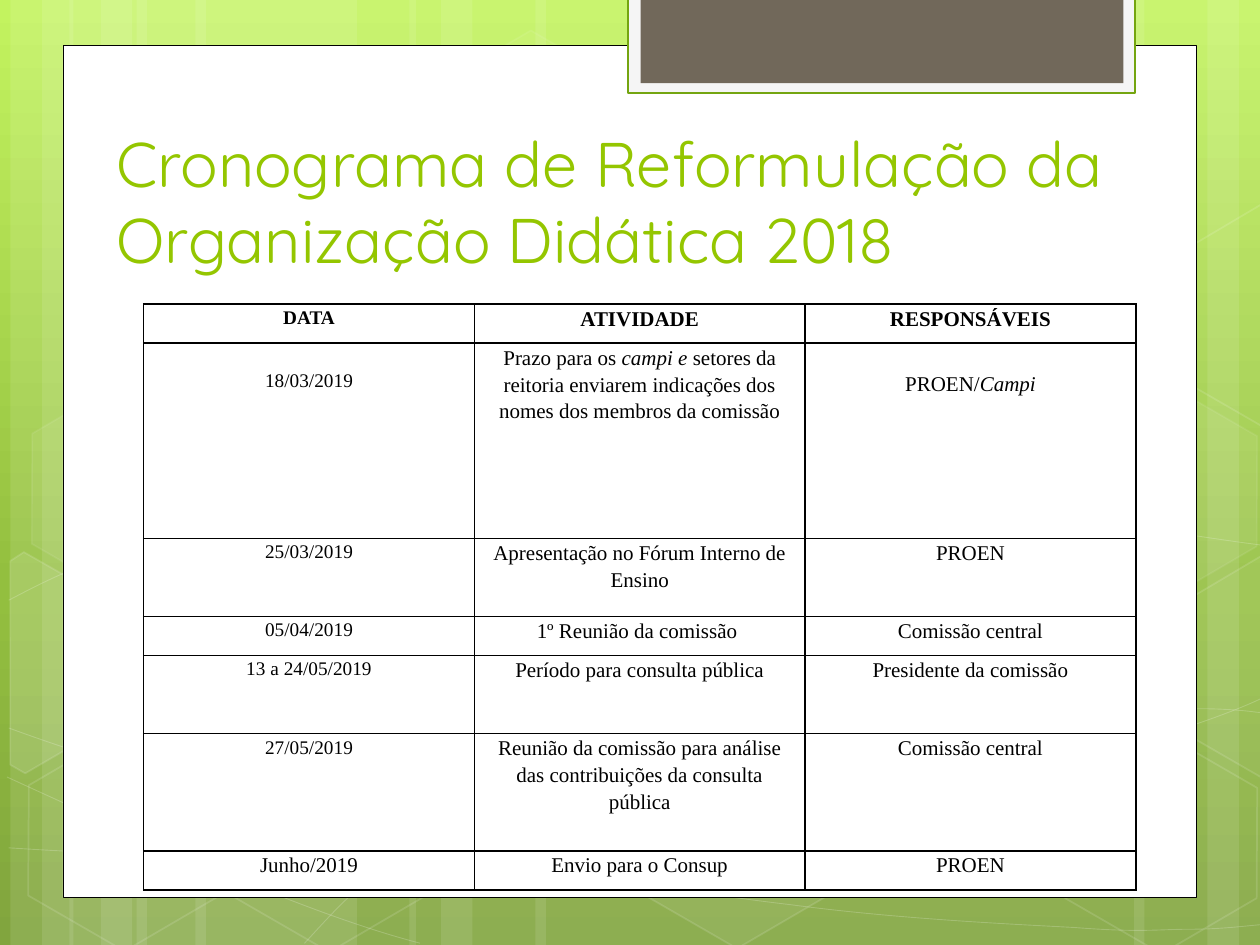
from lxml import etree
from pptx import Presentation
from pptx.dml.color import RGBColor
from pptx.enum import shapes as kinds, text
from pptx.oxml.ns import qn
from pptx.util import Pt

WHITE = RGBColor(0xFF, 0xFF, 0xFF)
BLACK = RGBColor(0, 0, 0)
PALE = RGBColor(0xF5, 0xF5, 0xF5)
GREEN = RGBColor(0x74, 0xA5, 0x10)
BROWN = RGBColor(0x71, 0x68, 0x5A)
LIME = RGBColor(0x94, 0xC6, 0x00)
SKY = [(0, RGBColor(0xC3, 0xF3, 0x5F)), (62, RGBColor(0x93, 0xBF, 0x3F)),
       (100, RGBColor(0x81, 0xA5, 0x3E))]
RECT = kinds.MSO_SHAPE.RECTANGLE
HEX = kinds.MSO_SHAPE.HEXAGON

deck = Presentation()
deck.slide_width, deck.slide_height = Pt(720), Pt(540)
slide = deck.slides.add_slide(deck.slide_layouts[6])
items = slide.shapes


def paint(shape, fill=None, line=None, width=1, body=100, edge=100):
    """Set fill and line; body and edge are their opacities in percent, body 0 is no fill."""
    shape.shadow.inherit = False
    fades = []
    for part, tone, fade in ((shape.fill, fill, body), (shape.line.fill, line, edge)):
        if tone is None or fade == 0:
            part.background()
        else:
            part.solid()
            part.fore_color.rgb = tone
            fades.append(fade)
    if line is not None:
        shape.line.width = Pt(width)
    tones = list(shape.element.spPr.iter(qn("a:srgbClr")))
    for tone, fade in zip(tones, fades):
        if fade < 100:
            etree.SubElement(tone, qn("a:alpha"), val=str(fade * 1000))


def outline(points, close, left=0, top=0):
    start, *rest = [(Pt(left + x), Pt(top + y)) for x, y in points]
    pen = items.build_freeform(*start)
    pen.add_line_segments(rest, close=close)
    return pen.convert_to_shape()


# Background gradient
back = slide.background.fill
back.gradient()
back.gradient_angle = 270
stops = slide.element.find(".//" + qn("a:gsLst"))
for old in list(stops):
    stops.remove(old)
for pos, tone in SKY:
    stop = etree.SubElement(stops, qn("a:gs"), pos=str(pos * 1000))
    etree.SubElement(stop, qn("a:srgbClr"), val=str(tone))

# Light vertical bars: left, width
bars = [(78, 126), (6, 36), (24, 60), (111.6, 126), (39.6, 36), (57.6, 60),
        (528, 126), (690, 36), (648, 60), (306, 222), (234, 36), (252, 60)]
for left, width in bars:
    bar = items.add_shape(RECT, Pt(left), 0, Pt(width), Pt(540))
    paint(bar, WHITE, body=10)

# Thin curves: a start, then two controls and an end for each cubic piece
curves = [
    [(5, 484.5), (44, 487), (83, 489), (137, 488), (191, 487), (258, 486), (330, 479),
     (402, 472), (504, 458), (570, 444), (636, 431), (703, 409), (725, 397)],
    [(5, 343), (26, 332), (47, 321), (87, 310), (128, 300), (186, 284), (250, 279),
     (314, 274), (392, 273), (471, 279), (550, 284), (682, 307), (725, 312)],
    [(4, 444), (91, 484), (178, 523), (240, 539)],
    [(5, 416), (27, 424), (50, 432), (92, 444), (134, 454), (197, 472), (257, 485),
     (317, 497), (392, 510), (452, 517), (512, 525), (576, 528), (614, 530),
     (652, 533), (662, 531), (680, 531), (699, 531), (712, 529), (725, 528)],
    [(174, 539), (187, 525), (200, 510), (217, 498), (235, 485), (259, 470), (279, 460),
     (300, 450), (312, 446), (338, 438), (364, 431), (413, 421), (438, 416),
     (464, 411), (467, 411), (490, 410), (512, 408), (547, 405), (572, 405),
     (597, 404), (638, 405), (638, 405), (654, 405), (670, 405), (686, 405),
     (699, 405), (711, 406), (718, 407), (724, 407.5), (722, 407), (724, 407.5)],
]
for knots in curves:
    curve = outline(knots, False)
    track = curve.element.spPr.find(".//" + qn("a:path"))
    legs = track.findall(qn("a:lnTo"))
    for i in range(0, len(legs), 3):
        bend = etree.SubElement(track, qn("a:cubicBezTo"))
        for leg in legs[i:i + 3]:
            bend.append(leg[0])
            track.remove(leg)
    paint(curve, line=WHITE, width=0.5, edge=20)

# Whole hexagons: left, top, fill opacity, line opacity
cells = [(240.5, 26, 4, 8), (358, 424, 6, 12), (8, 425.5, 0, 12), (10, 224.5, 7, 8),
         (125, 426, 0, 12), (542, 326, 10, 12), (600.5, 427, 0, 12), (600.5, 226, 7, 8)]
for left, top, body, edge in cells:
    cell = items.add_shape(HEX, Pt(left), Pt(top), Pt(126), Pt(109.5))
    cell.rotation = 30
    cell.adjustments[0] = 0.285
    paint(cell, WHITE, WHITE, body=body, edge=edge)

# Hexagons cut by the slide's sides, before their turn
WEST = [(0, 8.7), (4.2, 0.4), (68, 0), (99.1, 55.3), (68.1, 109.5), (58.2, 109.5)]
EAST = [(0, 54.2), (30.5, 0), (37.3, 0), (97.7, 104), (94.5, 109.3), (31.2, 109.3)]
cuts = [(WEST, -23.8, 330.5, 10), (EAST, 660.2, 319.7, 4), (EAST, 660.2, 118.8, 0)]
for points, left, top, body in cuts:
    cut = outline(points, True, left, top)
    cut.rotation = 30
    paint(cut, WHITE, WHITE, body=body, edge=12)

# White page and the tab at its top
panels = [((36, 26, 648, 487), WHITE, BLACK, 0.5),
          ((359, -1.5, 289.5, 54.5), PALE, GREEN, 1.25),
          ((366, -1.5, 276, 49), BROWN, None, 0)]
for box, fill, line, width in panels:
    paint(items.add_shape(RECT, *map(Pt, box)), fill, line, width)

# Title
title = items.add_textbox(Pt(59.6), Pt(71.3), Pt(641), Pt(90)).text_frame
title.word_wrap = True
title.vertical_anchor = text.MSO_ANCHOR.BOTTOM
run = title.paragraphs[0].add_run()
run.text = "Cronograma de Reformulação da Organização Didática 2018"
run.font.name, run.font.size = "Quicksand", Pt(36)
run.font.color.rgb = LIME

# Timetable: row height in units, then the cells; a list alternates upright and italic
UNIT = 22.32
rows = [
    (1, "DATA", "ATIVIDADE", "RESPONSÁVEIS"),
    (5, "18/03/2019",
     ["Prazo para os ", "campi e ",
      "setores da reitoria enviarem indicações dos nomes dos membros da comissão"],
     ["PROEN/", "Campi"]),
    (2, "25/03/2019", "Apresentação no Fórum Interno de Ensino", "PROEN"),
    (1, "05/04/2019", "1º Reunião da comissão ", "Comissão central"),
    (2, "13 a 24/05/2019", "Período para consulta pública", "Presidente da comissão"),
    (3, "27/05/2019",
     "Reunião da comissão para análise das contribuições da consulta pública",
     "Comissão central"),
    (1, "Junho/2019", "Envio para o Consup", "PROEN"),
]
drops = {(1, 0): 14, (1, 2): 15}
pads = {"margin_left": Pt(5), "margin_right": Pt(5), "margin_bottom": 0}
height = UNIT * sum(row[0] for row in rows)
grid = items.add_table(len(rows), 3, Pt(82.1), Pt(173.75), Pt(567), Pt(height)).table
grid.first_row = grid.horz_banding = False
for col in grid.columns:
    col.width = Pt(189)
for r, (units, *texts) in enumerate(rows):
    grid.rows[r].height = Pt(units * UNIT)
    for c, parts in enumerate(texts):
        cell = grid.cell(r, c)
        for name, value in pads.items():
            setattr(cell, name, value)
        cell.margin_top = Pt(drops.get((r, c), 0))
        props = cell._tc.get_or_add_tcPr()
        for side in ("a:lnL", "a:lnR", "a:lnT", "a:lnB"):
            edge = etree.SubElement(props, qn(side), w=str(Pt(1)))
            ink = etree.SubElement(edge, qn("a:solidFill"))
            etree.SubElement(ink, qn("a:srgbClr"), val=str(BLACK))
        cell.fill.background()
        para = cell.text_frame.paragraphs[0]
        para.alignment = text.PP_ALIGN.CENTER
        para.line_spacing = 1.15
        size = 11 if c == 0 and r < len(rows) - 1 else 12
        for i, words in enumerate([parts] if isinstance(parts, str) else parts):
            run = para.add_run()
            run.text = words
            looks = {"name": "Times New Roman", "size": Pt(size),
                     "bold": r == 0, "italic": i == 1}
            for name, value in looks.items():
                setattr(run.font, name, value)
            run.font.color.rgb = BLACK

deck.save("out.pptx")
